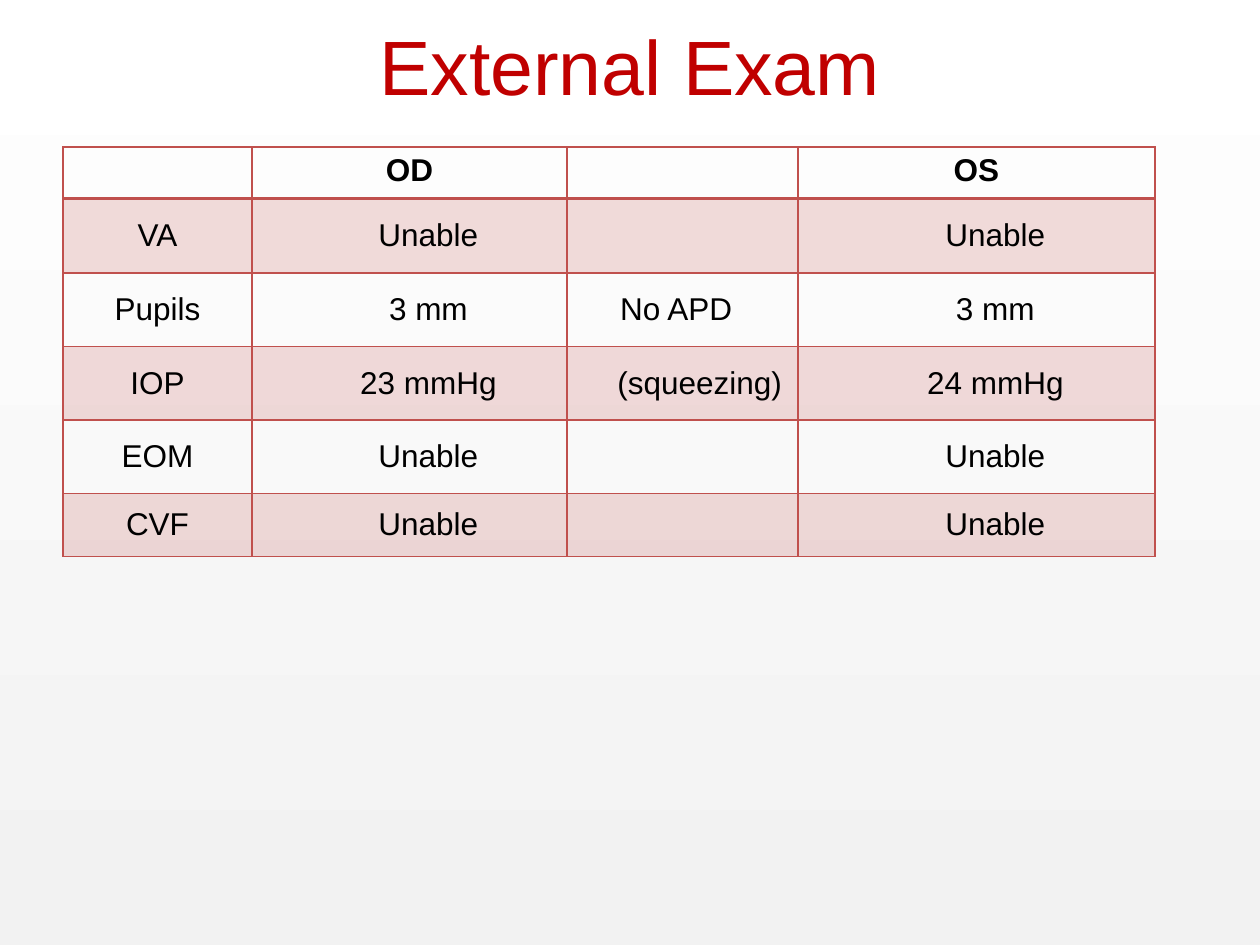
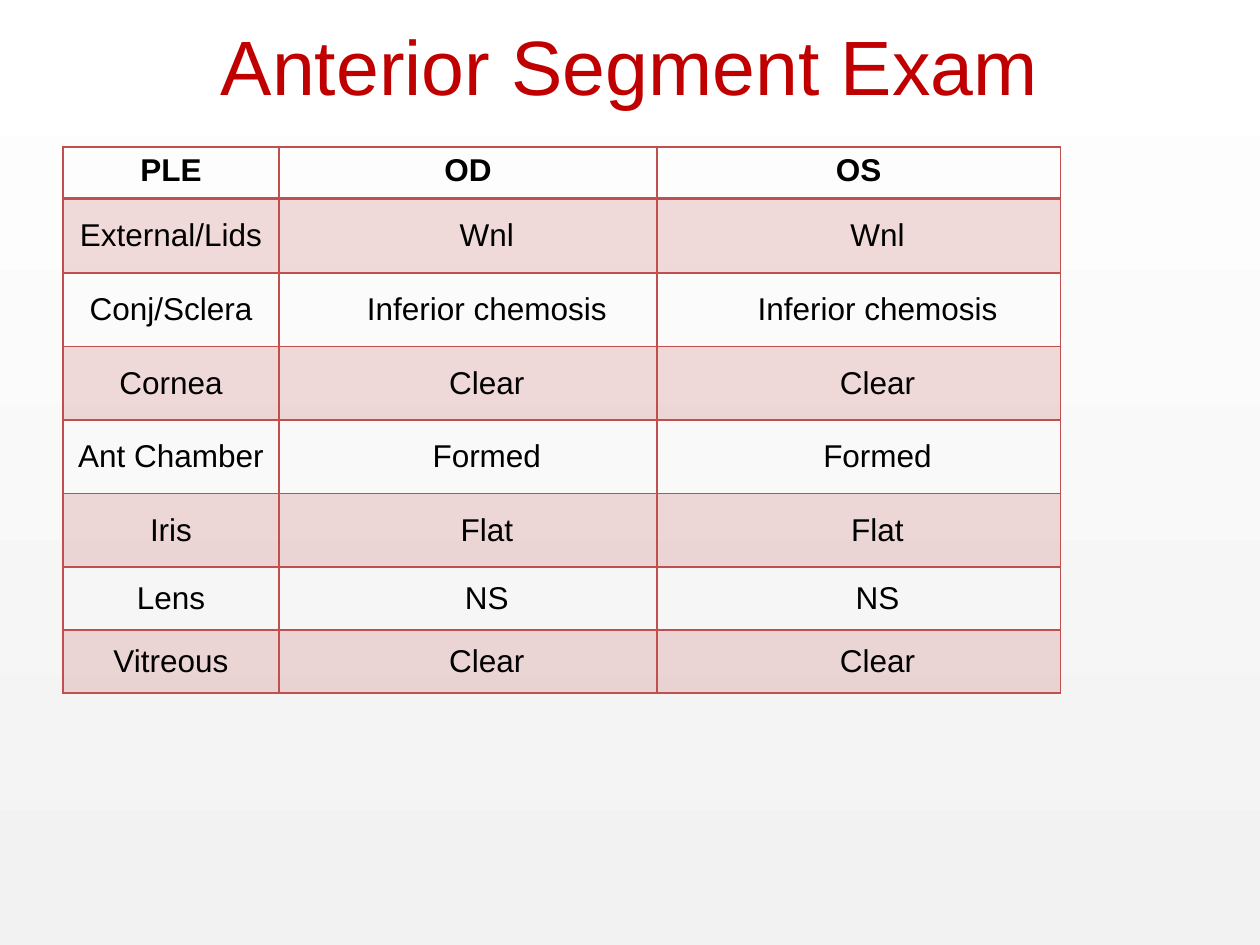
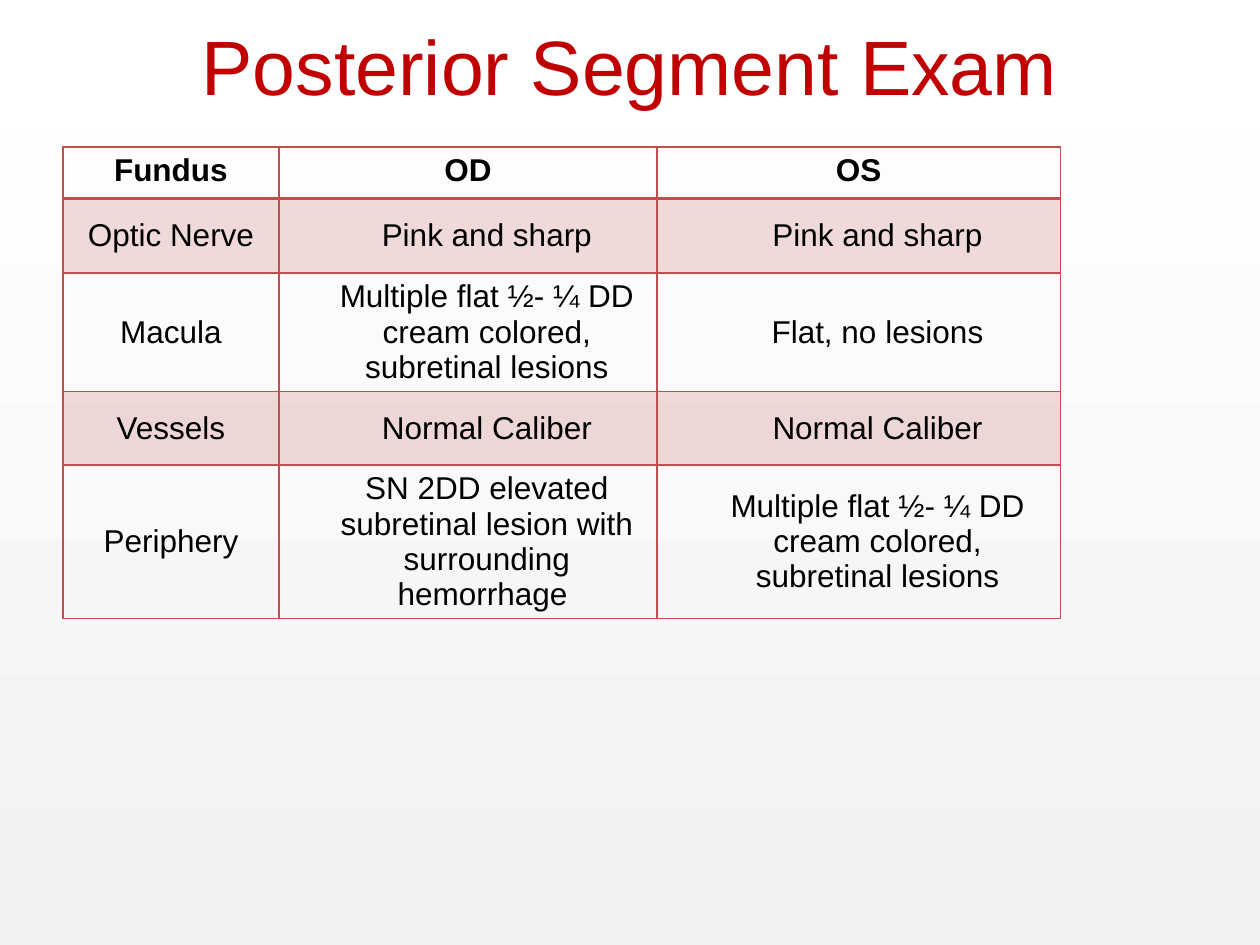
from dataclasses import dataclass
from lxml.etree import SubElement
from pptx import Presentation
from pptx.dml.color import RGBColor
from pptx.enum.text import MSO_ANCHOR, PP_ALIGN
from pptx.oxml.ns import qn
from pptx.util import Pt


@dataclass(frozen=True)
class Theme:
    font: str = "Arial"
    title_size: float = 44
    table_size: float = 18
    title_color: str = "C00000"
    text_color: str = "000000"
    accent: str = "C0504D"
    band_opacity: int = 20
    background_bottom: str = "F2F2F2"
    background_top: str = "FFFFFF"
    thin_line: float = 1
    header_line: float = 2


THEME = Theme()
SLIDE_SIZE = (720, 540)
TITLE_BOX = (36, -8, 648, 90)
TABLE_ORIGIN = (36, 84)
HEADER_HEIGHT = 29.5
VALUE_INDENT = 28.8
EXTERNAL_COLUMNS = (108, 180, 132, 204)
SEGMENT_COLUMNS = (123.4, 216, 230.5)
MACULAR_LESIONS = "Multiple flat ½- ¼ DD cream colored, subretinal lesions"

# Each row is its height followed by its label and values.
EXAMS = [
    {
        "title": "External Exam",
        "columns": EXTERNAL_COLUMNS,
        "header": ("", "OD", "", "OS"),
        "rows": [
            (42.5, "VA", "Unable", "", "Unable"),
            (42, "Pupils", "3 mm", "No APD", "3 mm"),
            (42, "IOP", "23 mmHg", "(squeezing)", "24 mmHg"),
            (42, "EOM", "Unable", "", "Unable"),
            (36, "CVF", "Unable", "", "Unable"),
        ],
        "cell_formats": {
            "No APD": {"indent": 0},
            "(squeezing)": {"alignment": PP_ALIGN.LEFT},
        },
    },
    {
        "title": "Anterior Segment Exam",
        "columns": SEGMENT_COLUMNS,
        "header": ("PLE", "OD", "OS"),
        "rows": [
            (42.5, "External/Lids", "Wnl", "Wnl"),
            (42, "Conj/Sclera", "Inferior chemosis", "Inferior chemosis"),
            (42, "Cornea", "Clear", "Clear"),
            (42, "Ant Chamber", "Formed", "Formed"),
            (42, "Iris", "Flat", "Flat"),
            (36, "Lens", "NS", "NS"),
            (36, "Vitreous", "Clear", "Clear"),
        ],
    },
    {
        "title": "Posterior Segment Exam",
        "columns": SEGMENT_COLUMNS,
        "header": ("Fundus", "OD", "OS"),
        "rows": [
            (42.5, "Optic Nerve", "Pink and sharp", "Pink and sharp"),
            (42, "Macula", MACULAR_LESIONS, "Flat, no lesions"),
            (42, "Vessels", "Normal Caliber", "Normal Caliber"),
            (42, "Periphery",
             "SN 2DD elevated subretinal lesion with surrounding hemorrhage ",
             MACULAR_LESIONS),
        ],
    },
]


def set_attributes(target, values):
    for name, value in values.items():
        setattr(target, name, value)


def write_text(text_frame, text, size, color, bold=False, alignment=PP_ALIGN.CENTER):
    paragraph = text_frame.paragraphs[0]
    paragraph.alignment = alignment
    run = paragraph.add_run()
    run.text = text
    set_attributes(run.font, {"name": THEME.font, "size": Pt(size), "bold": bold})
    run.font.color.rgb = RGBColor.from_string(color)


def set_master_background(master):
    fill = master.background.fill
    fill.gradient()
    fill.gradient_angle = 90
    colors = (THEME.background_bottom, THEME.background_top)
    for position, (stop, color) in enumerate(zip(fill.gradient_stops, colors)):
        stop.position = position
        stop.color.rgb = RGBColor.from_string(color)


def place_title(title, text, box):
    names = ("left", "top", "width", "height")
    set_attributes(title, dict(zip(names, map(Pt, box))))
    title.text_frame.vertical_anchor = MSO_ANCHOR.MIDDLE
    write_text(title.text_frame, text, THEME.title_size, THEME.title_color)


def draw_borders(cell, top, bottom):
    weights = {"lnL": THEME.thin_line, "lnR": THEME.thin_line,
               "lnT": top, "lnB": bottom}
    properties = cell._tc.get_or_add_tcPr()
    for tag, weight in weights.items():
        line = SubElement(properties, qn(f"a:{tag}"), w=str(Pt(weight)))
        fill = SubElement(line, qn("a:solidFill"))
        SubElement(fill, qn("a:srgbClr"), val=THEME.accent)


def fill_band(cell):
    cell.fill.solid()
    cell.fill.fore_color.rgb = RGBColor.from_string(THEME.accent)
    color = cell._tc.tcPr.find(qn("a:solidFill")).find(qn("a:srgbClr"))
    SubElement(color, qn("a:alpha"), val=str(THEME.band_opacity * 1000))


def format_cell(cell, text, row, column, indent=VALUE_INDENT, alignment=PP_ALIGN.CENTER):
    is_header = row == 0
    draw_borders(cell,
                 top=THEME.header_line if row == 1 else THEME.thin_line,
                 bottom=THEME.header_line if is_header else THEME.thin_line)
    if row % 2:
        fill_band(cell)
    else:
        cell.fill.background()
    if not text:
        return
    if not is_header:
        cell.vertical_anchor = MSO_ANCHOR.MIDDLE
        if column:
            cell.margin_left = Pt(indent)
    write_text(cell.text_frame, text, THEME.table_size, THEME.text_color,
               bold=is_header, alignment=alignment)


def add_exam_table(slide, origin, columns, header, rows, cell_formats):
    heights = [HEADER_HEIGHT] + [height for height, *_ in rows]
    lines = [header] + [texts for _, *texts in rows]
    left, top = origin
    table = slide.shapes.add_table(
        len(lines), len(columns), Pt(left), Pt(top),
        Pt(sum(columns)), Pt(sum(heights))).table
    set_attributes(table, {"first_row": False, "horz_banding": False})
    for column, width in zip(table.columns, columns):
        column.width = Pt(width)
    for row, (height, texts) in enumerate(zip(heights, lines)):
        table.rows[row].height = Pt(height)
        for column, text in enumerate(texts):
            format_cell(table.cell(row, column), text, row, column,
                        **cell_formats.get(text, {}))


def add_exam_slide(presentation, title, columns, header, rows, cell_formats=None):
    slide = presentation.slides.add_slide(presentation.slide_layouts[5])
    place_title(slide.shapes.title, title, TITLE_BOX)
    add_exam_table(slide, TABLE_ORIGIN, columns, header, rows, cell_formats or {})


def main():
    presentation = Presentation()
    presentation.slide_width, presentation.slide_height = map(Pt, SLIDE_SIZE)
    set_master_background(presentation.slide_master)
    for exam in EXAMS:
        add_exam_slide(presentation, **exam)
    presentation.save("out.pptx")


if __name__ == "__main__":
    main()
